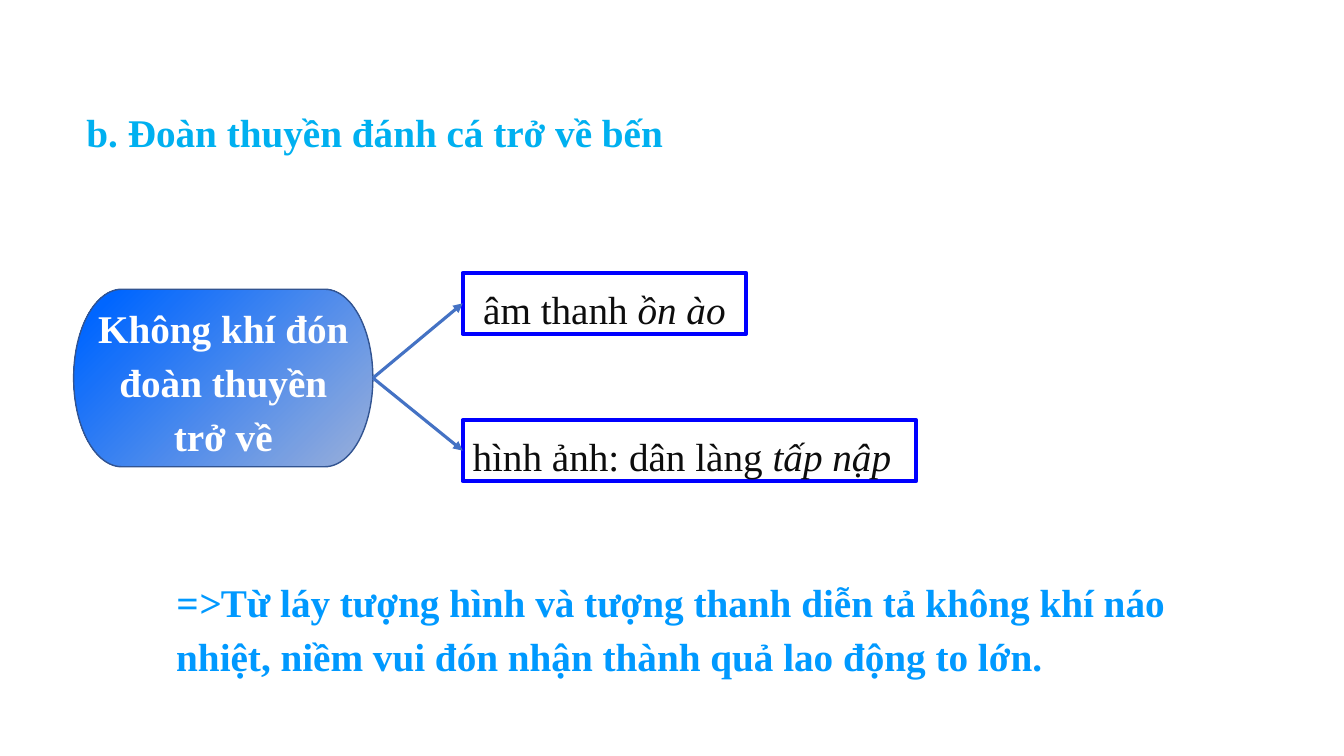
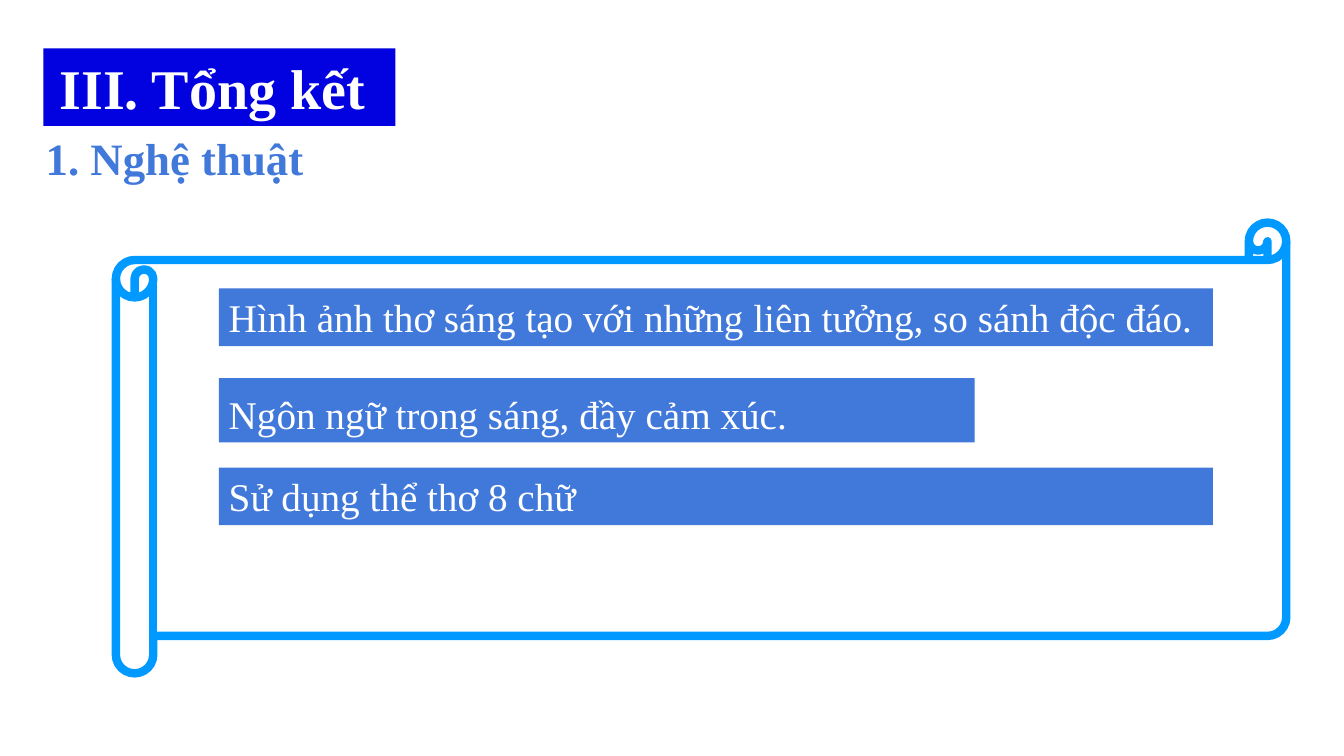
from dataclasses import dataclass
from typing import Optional

from lxml import etree
from pptx import Presentation
from pptx.dml.color import RGBColor
from pptx.enum.shapes import MSO_CONNECTOR, MSO_SHAPE
from pptx.enum.text import MSO_ANCHOR, MSO_AUTO_SIZE, PP_ALIGN
from pptx.oxml.ns import qn
from pptx.util import Pt

RECT = MSO_SHAPE.RECTANGLE
PILL = MSO_SHAPE.FLOWCHART_TERMINATOR
SCROLL = MSO_SHAPE.HORIZONTAL_SCROLL
STRAIGHT = MSO_CONNECTOR.STRAIGHT
TOP, MIDDLE = MSO_ANCHOR.TOP, MSO_ANCHOR.MIDDLE
GROW = MSO_AUTO_SIZE.SHAPE_TO_FIT_TEXT
LEFT, CENTER, JUSTIFY = PP_ALIGN.LEFT, PP_ALIGN.CENTER, PP_ALIGN.JUSTIFY

FONT = "Times New Roman"
WHITE = RGBColor(0xFF, 0xFF, 0xFF)
INK = RGBColor(0x0D, 0x0D, 0x0D)
CYAN = RGBColor(0x00, 0xB0, 0xF0)
SKY = RGBColor(0x00, 0x99, 0xFF)
BLUE = RGBColor(0x00, 0x00, 0xFF)
NAVY = RGBColor(0x02, 0x01, 0xDF)
STEEL = RGBColor(0x41, 0x79, 0xDA)
ARROW = RGBColor(0x44, 0x72, 0xC4)
EDGE = RGBColor(0x32, 0x54, 0x91)
PALE = RGBColor(0x8F, 0xAA, 0xDC)
VIVID = RGBColor(0x00, 0x66, 0xFF)


@dataclass(frozen=True)
class Area:
    left: float
    top: float
    width: float
    height: float

    @property
    def mid(self) -> float:
        return self.top + self.height / 2


@dataclass(frozen=True)
class Piece:
    """A stretch of text in one slant."""
    text: str
    slant: bool = False


@dataclass(frozen=True)
class Style:
    color: RGBColor
    size: float = 28
    bold: bool = False
    align: PP_ALIGN = LEFT
    loose: bool = False
    indent: float = 0


@dataclass(frozen=True)
class Box:
    area: Area
    words: tuple[Piece, ...]
    style: Style
    fill: Optional[RGBColor] = None
    line: Optional[RGBColor] = None


TITLE = Style(CYAN, bold=True, loose=True)
CLOSE = Style(SKY, bold=True, loose=True)
HEAD = Style(WHITE, 40, True, JUSTIFY, indent=4.5)
SUB = Style(STEEL, 32, True, JUSTIFY, indent=4.5)
CAUSE = Style(WHITE, bold=True, align=CENTER, loose=True)
NOTE = Style(INK, loose=True)
NOTE_MID = Style(INK, align=CENTER, loose=True)
BAR = Style(WHITE)
BAR_LOOSE = Style(WHITE, loose=True)


def write(shape, words: tuple[Piece, ...], style: Style) -> None:
    frame = shape.text_frame
    frame.word_wrap = True
    para = frame.paragraphs[0]
    para.alignment = style.align
    if style.loose:
        para.line_spacing = 1.15
        para.space_before = para.space_after = Pt(6)
    if style.indent:
        props = para._p.get_or_add_pPr()
        props.set("marL", "0")
        props.set("indent", str(Pt(style.indent)))
    for piece in words:
        run = para.add_run()
        run.text = piece.text
        font = run.font
        font.name, font.size = FONT, Pt(style.size)
        font.bold, font.italic = style.bold, piece.slant
        font.color.rgb = style.color


def add_shape(slide, kind: MSO_SHAPE, area: Area,
              line: Optional[RGBColor] = None, weight: float = 3):
    shape = slide.shapes.add_shape(
        kind, Pt(area.left), Pt(area.top), Pt(area.width), Pt(area.height))
    shape.shadow.inherit = False
    shape.fill.background()
    if line is None:
        shape.line.fill.background()
    else:
        shape.line.color.rgb = line
        shape.line.width = Pt(weight)
    return shape


def add_box(slide, box: Box) -> None:
    shape = add_shape(slide, RECT, box.area, box.line)
    if box.fill is not None:
        shape.fill.solid()
        shape.fill.fore_color.rgb = box.fill
    frame = shape.text_frame
    frame.vertical_anchor = TOP
    frame.auto_size = GROW
    write(shape, box.words, box.style)


def add_pill(slide, area: Area, text: str) -> None:
    shape = add_shape(slide, PILL, area, EDGE, 1)
    shape.fill.gradient()
    shape.fill.gradient_angle = 135
    stops = ((0.07, PALE), (0.91, VIVID))
    for stop, (place, color) in zip(shape.fill.gradient_stops, stops):
        stop.position = place
        stop.color.rgb = color
    shape.text_frame.vertical_anchor = MIDDLE
    write(shape, (Piece(text),), CAUSE)


def add_arrow(slide, start: Area, end: Area) -> None:
    """Join the right side of start to the left side of end."""
    arrow = slide.shapes.add_connector(
        STRAIGHT, Pt(start.left + start.width), Pt(start.mid),
        Pt(end.left), Pt(end.mid))
    arrow.line.color.rgb = ARROW
    arrow.line.width = Pt(2.25)
    etree.SubElement(arrow.line._get_or_add_ln(), qn("a:tailEnd"),
                     type="triangle")
    etree.SubElement(arrow._element.spPr, qn("a:effectLst"))


def draw_return(slide) -> None:
    add_box(slide, Box(Area(54.7, 69, 618, 46),
                       (Piece("b. Đoàn thuyền đánh cá trở về bến"),), TITLE))
    cause = Area(52.6, 206.6, 213.8, 126.8)
    add_pill(slide, cause, "Không khí đón đoàn thuyền trở về")
    notes = (
        Box(Area(330.5, 195, 202.5, 43.4),
            (Piece("âm thanh "), Piece("ồn ào", True)), NOTE_MID, line=BLUE),
        Box(Area(330.5, 300.2, 324, 43.4),
            (Piece("hình ảnh: dân làng "), Piece("tấp nập", True)),
            NOTE, line=BLUE),
    )
    for note in notes:
        add_box(slide, note)
        add_arrow(slide, cause, note.area)
    add_box(slide, Box(Area(118.8, 404.6, 748, 85), (
        Piece("=>", True),
        Piece("Từ láy tượng hình và tượng thanh diễn tả không khí náo nhiệt, "
              "niềm vui đón nhận thành quả lao động to lớn."),
    ), CLOSE))


def draw_recap(slide) -> None:
    add_box(slide, Box(Area(21, 90, 480, 46), (Piece("1. Nghệ thuật"),), SUB))
    add_box(slide, Box(Area(31, 34.5, 251.5, 55.5),
                       (Piece("III. Tổng kết"),), HEAD, NAVY))
    scroll = add_shape(slide, SCROLL, Area(82.8, 159, 836, 322), SKY, 6)
    scroll.adjustments[0] = 0.083
    bars = (
        ("Hình ảnh thơ sáng tạo với những liên tưởng, so sánh độc đáo.",
         710, 41.2, BAR),
        ("Ngôn ngữ trong sáng, đầy cảm xúc.", 540, 46, BAR_LOOSE),
        ("Sử dụng thể thơ 8 chữ", 710, 41.2, BAR),
    )
    for row, (text, width, height, style) in enumerate(bars):
        add_box(slide, Box(Area(156.3, 206 + 64 * row, width, height),
                           (Piece(text),), style, STEEL))


def main() -> None:
    deck = Presentation()
    deck.slide_width, deck.slide_height = Pt(960), Pt(540)
    blank = deck.slide_layouts[6]
    for draw in (draw_return, draw_recap):
        draw(deck.slides.add_slide(blank))
    deck.save("out.pptx")


if __name__ == "__main__":
    main()
